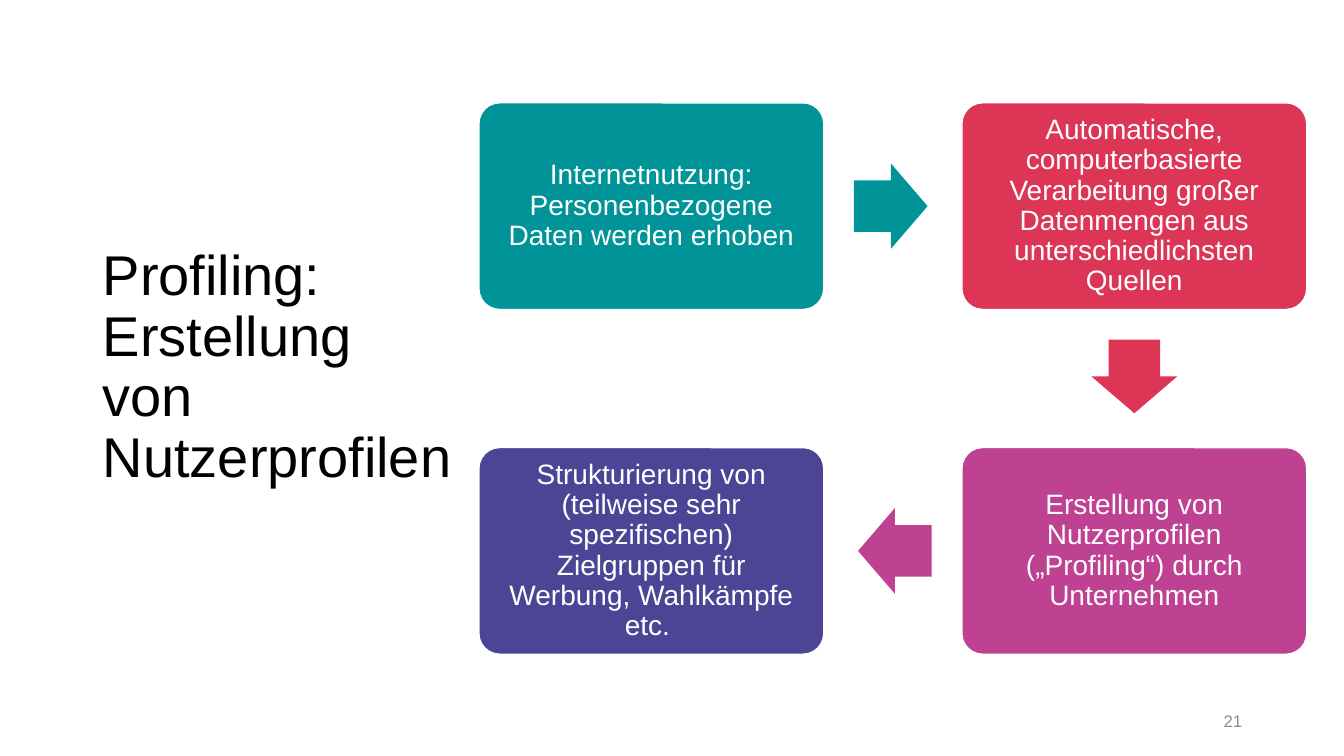
import math
from dataclasses import dataclass

import pptx
import pptx.dml.color
import pptx.enum.shapes
import pptx.enum.text
import pptx.shapes.autoshape
import pptx.slide
import pptx.text.text
import pptx.util

Inches = pptx.util.Inches
Kind = pptx.enum.shapes.MSO_SHAPE
Align = pptx.enum.text.PP_ALIGN


@dataclass(frozen=True)
class Theme:
    """Hold the colours, font and type sizes."""

    font: str = "Arial"
    ink: str = "000000"
    paper: str = "FFFFFF"
    muted: str = "8C8C8C"
    teal: str = "009499"
    red: str = "DC3555"
    pink: str = "BF4191"
    violet: str = "4C4596"
    head: int = 40
    body: int = 20
    small: int = 12


@dataclass(frozen=True)
class Step:
    """Describe one card of the cycle by its grid cell."""

    text: str
    fill: str
    col: int
    row: int

    def centre(self) -> tuple[float, float]:
        """Give the middle of the card in inches."""
        return (LEFT + self.col * PITCH_X + CARD_W / 2,
                TOP + self.row * PITCH_Y + CARD_H / 2)


THEME = Theme()
LEFT, TOP = 4.75, 1.02
CARD_W, CARD_H = 3.42, 2.05
PITCH_X, PITCH_Y = 4.79, 3.42
ARROW_W, ARROW_H = 0.73, 0.85
SETBACK = 0.02

STEPS = [
    Step("Internetnutzung: Personenbezogene Daten werden erhoben", THEME.teal, 0, 0),
    Step("Automatische, computerbasierte Verarbeitung großer Datenmengen aus "
         "unterschiedlichsten Quellen", THEME.red, 1, 0),
    Step("Erstellung von Nutzerprofilen („Profiling“) durch Unternehmen",
         THEME.pink, 1, 1),
    Step("Strukturierung von (teilweise sehr spezifischen) Zielgruppen für "
         "Werbung, Wahlkämpfe etc. ", THEME.violet, 0, 1),
]


def tint(code: str) -> pptx.dml.color.RGBColor:
    """Turn a hex code into a colour."""
    return pptx.dml.color.RGBColor.from_string(code)


def write(frame: pptx.text.text.TextFrame, text: str, size: int, ink: str,
          align: Align, lead: float = 0.9) -> None:
    """Set one vertically centred paragraph in a frame."""
    frame.word_wrap = True
    frame.auto_size = pptx.enum.text.MSO_AUTO_SIZE.NONE
    frame.vertical_anchor = pptx.enum.text.MSO_ANCHOR.MIDDLE
    para = frame.paragraphs[0]
    para.alignment = align
    para.line_spacing = lead
    run = para.add_run()
    run.text = text
    run.font.name = THEME.font
    run.font.size = pptx.util.Pt(size)
    run.font.color.rgb = tint(ink)


def block(slide: pptx.slide.Slide, kind: Kind, mid: tuple[float, float],
          width: float, height: float, fill: str) -> pptx.shapes.autoshape.Shape:
    """Draw a flat filled shape around a middle point."""
    shape = slide.shapes.add_shape(
        kind, Inches(mid[0] - width / 2), Inches(mid[1] - height / 2),
        Inches(width), Inches(height))
    shape.shadow.inherit = False
    shape.fill.solid()
    shape.fill.fore_color.rgb = tint(fill)
    return shape


def card(slide: pptx.slide.Slide, step: Step) -> None:
    """Draw one rounded card with its text."""
    shape = block(slide, Kind.ROUNDED_RECTANGLE, step.centre(),
                  CARD_W, CARD_H, step.fill)
    shape.adjustments[0] = 0.1
    shape.line.color.rgb = tint(THEME.paper)
    shape.line.width = pptx.util.Pt(1)
    frame = shape.text_frame
    frame.margin_left = frame.margin_right = Inches(0.08)
    frame.margin_top = frame.margin_bottom = Inches(0.08)
    write(frame, step.text, THEME.body, THEME.paper, Align.CENTER)


def arrow(slide: pptx.slide.Slide, start: Step, end: Step) -> None:
    """Draw a block arrow between two cards in the colour of the first."""
    (x1, y1), (x2, y2) = start.centre(), end.centre()
    turn = math.atan2(y2 - y1, x2 - x1)
    mid = ((x1 + x2) / 2 - SETBACK * math.cos(turn),
           (y1 + y2) / 2 - SETBACK * math.sin(turn))
    shape = block(slide, Kind.RIGHT_ARROW, mid, ARROW_W, ARROW_H, start.fill)
    shape.adjustments[0] = 0.6
    shape.adjustments[1] = 0.5
    shape.rotation = math.degrees(turn)
    shape.line.fill.background()


def main() -> None:
    """Build and save the slide."""
    deck = pptx.Presentation()
    deck.slide_width, deck.slide_height = Inches(13.33), Inches(7.5)
    slide = deck.slides.add_slide(deck.slide_layouts.get_by_name("Title Only"))

    title = slide.shapes.title
    title.left, title.top = Inches(0.92), Inches(0.61)
    title.width, title.height = Inches(3.69), Inches(6.09)
    write(title.text_frame, "Profiling: Erstellung von Nutzerprofilen",
          THEME.head, THEME.ink, Align.LEFT)

    for step in STEPS:
        card(slide, step)
    for start, end in zip(STEPS, STEPS[1:]):
        arrow(slide, start, end)

    page = slide.shapes.add_textbox(Inches(9.42), Inches(6.95), Inches(3), Inches(0.4))
    write(page.text_frame, "21", THEME.small, THEME.muted, Align.RIGHT, 1.0)
    deck.save("out.pptx")


if __name__ == "__main__":
    main()
